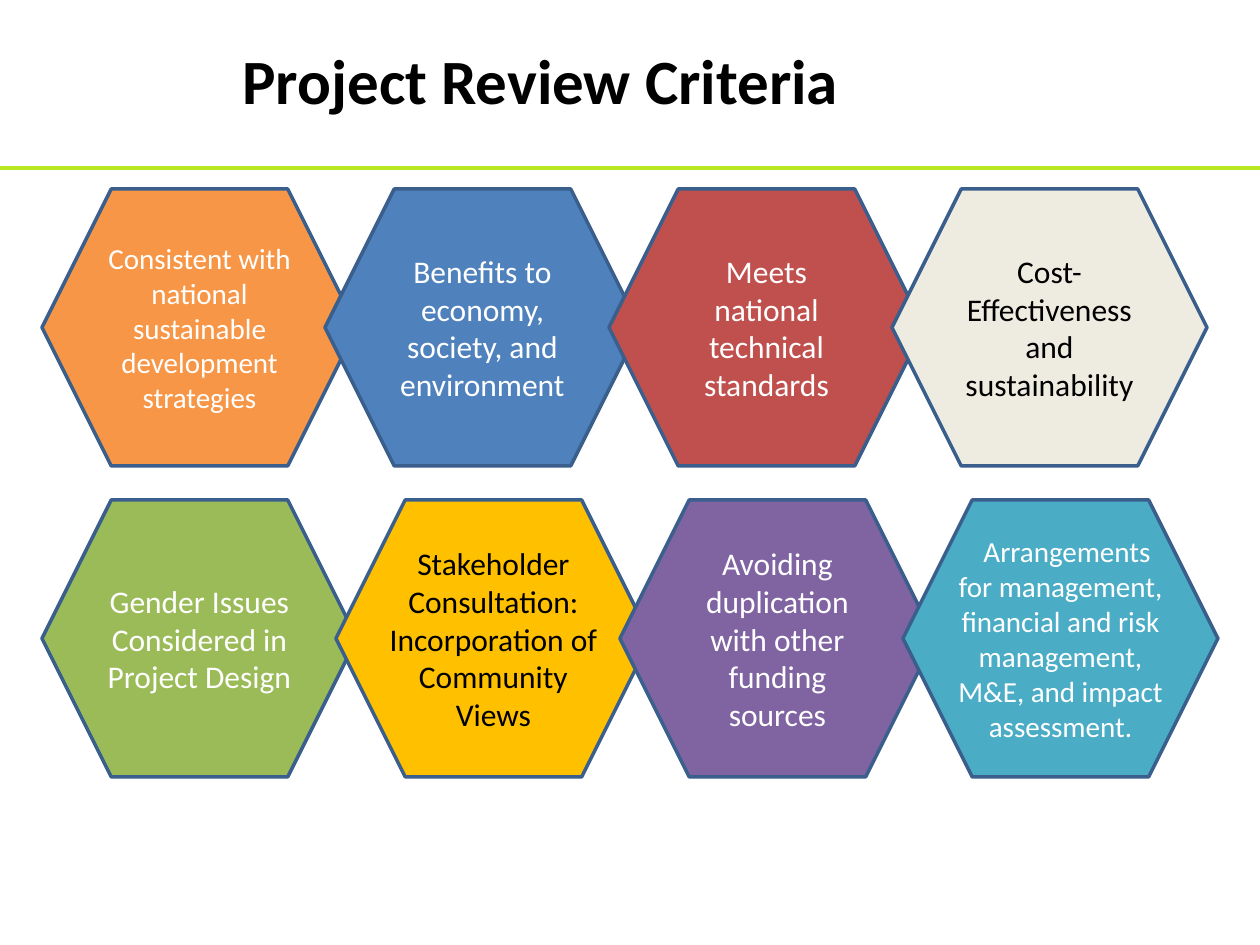
import pptx
import pptx.util
import pptx.dml.color
import pptx.enum.shapes
import pptx.enum.text
import lxml.etree

RGBColor = pptx.dml.color.RGBColor
BLACK = RGBColor(0x00, 0x00, 0x00)
WHITE = RGBColor(0xFF, 0xFF, 0xFF)
LIME = RGBColor(0xB7, 0xE7, 0x1F)
OUTLINE = RGBColor(0x3A, 0x5F, 0x8C)
ORANGE = RGBColor(0xF7, 0x96, 0x46)
BLUE = RGBColor(0x4F, 0x81, 0xBD)
RED = RGBColor(0xC0, 0x50, 0x4D)
CREAM = RGBColor(0xEE, 0xEC, 0xE1)
GREEN = RGBColor(0x9B, 0xBB, 0x59)
GOLD = RGBColor(0xFF, 0xC0, 0x00)
PURPLE = RGBColor(0x80, 0x64, 0xA2)
TEAL = RGBColor(0x4B, 0xAC, 0xC6)

FONT = "Calibri"
TITLE = "Project Review Criteria"
# text, fill, text colour, size, side inset, first line indent
TOP_ROW = [
    ("Consistent with national sustainable development strategies", ORANGE, WHITE, 16.6, 12, 0),
    ("Benefits to economy, society, and environment", BLUE, WHITE, 18, 12, 0),
    ("Meets national technical standards", RED, WHITE, 18, 12, 0),
    ("Cost-Effectiveness and sustainability", CREAM, BLACK, 18, 12, 0),
]
BOTTOM_ROW = [
    ("Gender Issues Considered in Project Design", GREEN, WHITE, 18, 0, 0),
    ("Stakeholder Consultation: Incorporation of Community Views", GOLD, BLACK, 18, 0, 0),
    ("Avoiding duplication with other funding sources", PURPLE, WHITE, 18, 12, 0),
    ("Arrangements for management, financial and risk management, M&E, and impact assessment.",
     TEAL, WHITE, 16.6, 0, 13),
]
ROWS = [
    (189, (42, 325, 609, 892), TOP_ROW),
    (500, (42, 336, 620, 903), BOTTOM_ROW),
]
HEXAGON_WIDTH, HEXAGON_HEIGHT = 315, 277


def px(length):
    return pptx.util.Emu(round(length * 914400 / 126))


def write(frame, text, size, color, bold=False):
    frame.word_wrap = True
    frame.vertical_anchor = pptx.enum.text.MSO_ANCHOR.MIDDLE
    frame.text = text
    paragraph = frame.paragraphs[0]
    paragraph.alignment = pptx.enum.text.PP_ALIGN.CENTER
    font = paragraph.runs[0].font
    font.name, font.size, font.bold = FONT, pptx.util.Pt(size), bold
    font.color.rgb = color
    return paragraph


def add_criterion(slide, left, top, criterion):
    text, fill, color, size, inset, indent = criterion
    hexagon = slide.shapes.add_shape(
        pptx.enum.shapes.MSO_SHAPE.HEXAGON,
        px(left), px(top), px(HEXAGON_WIDTH), px(HEXAGON_HEIGHT))
    hexagon.shadow.inherit = False
    hexagon.fill.solid()
    hexagon.fill.fore_color.rgb = fill
    hexagon.line.color.rgb = OUTLINE
    hexagon.line.width = pptx.util.Pt(2)
    frame = hexagon.text_frame
    frame.margin_left = frame.margin_right = px(inset)
    frame.margin_top = frame.margin_bottom = px(inset / 2)
    paragraph = write(frame, text, size, color)
    if indent:
        paragraph._p.get_or_add_pPr().set("indent", str(px(indent)))


def main():
    deck = pptx.Presentation()
    deck.slide_width, deck.slide_height = px(1260), px(945)
    slide = deck.slides.add_slide(deck.slide_layouts[6])

    title = slide.shapes.add_textbox(px(0), px(0), px(1081), px(158))
    write(title.text_frame, TITLE, 36, BLACK, bold=True)

    rule = slide.shapes.add_connector(
        pptx.enum.shapes.MSO_CONNECTOR.STRAIGHT, px(0), px(168), px(1260), px(168))
    rule.line.color.rgb = LIME
    rule.line.width = pptx.util.Pt(2)
    lxml.etree.SubElement(rule._element.spPr, pptx.oxml.ns.qn("a:effectLst"))

    for top, lefts, criteria in ROWS:
        for left, criterion in zip(lefts, criteria):
            add_criterion(slide, left, top, criterion)

    deck.save("out.pptx")


if __name__ == "__main__":
    main()
